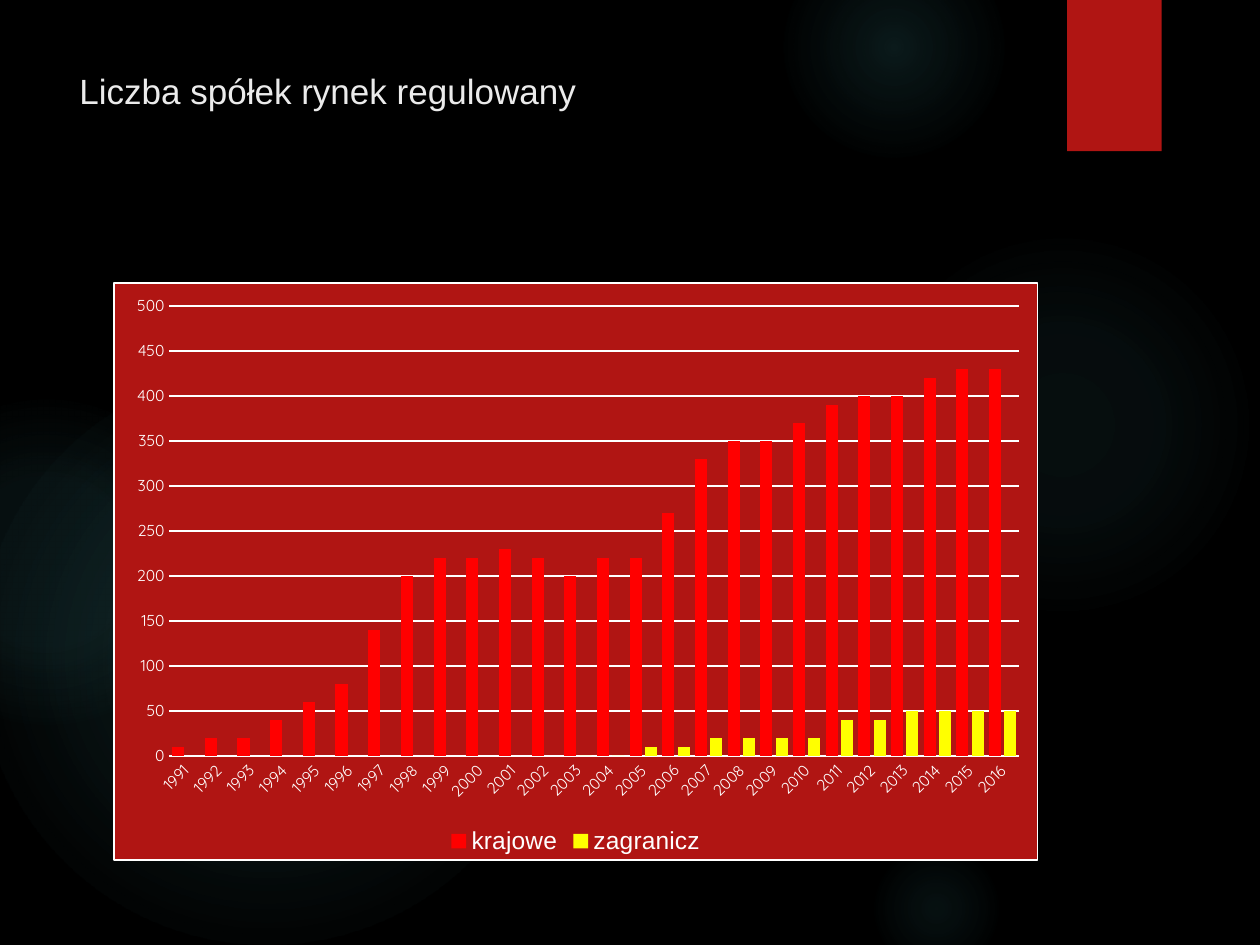
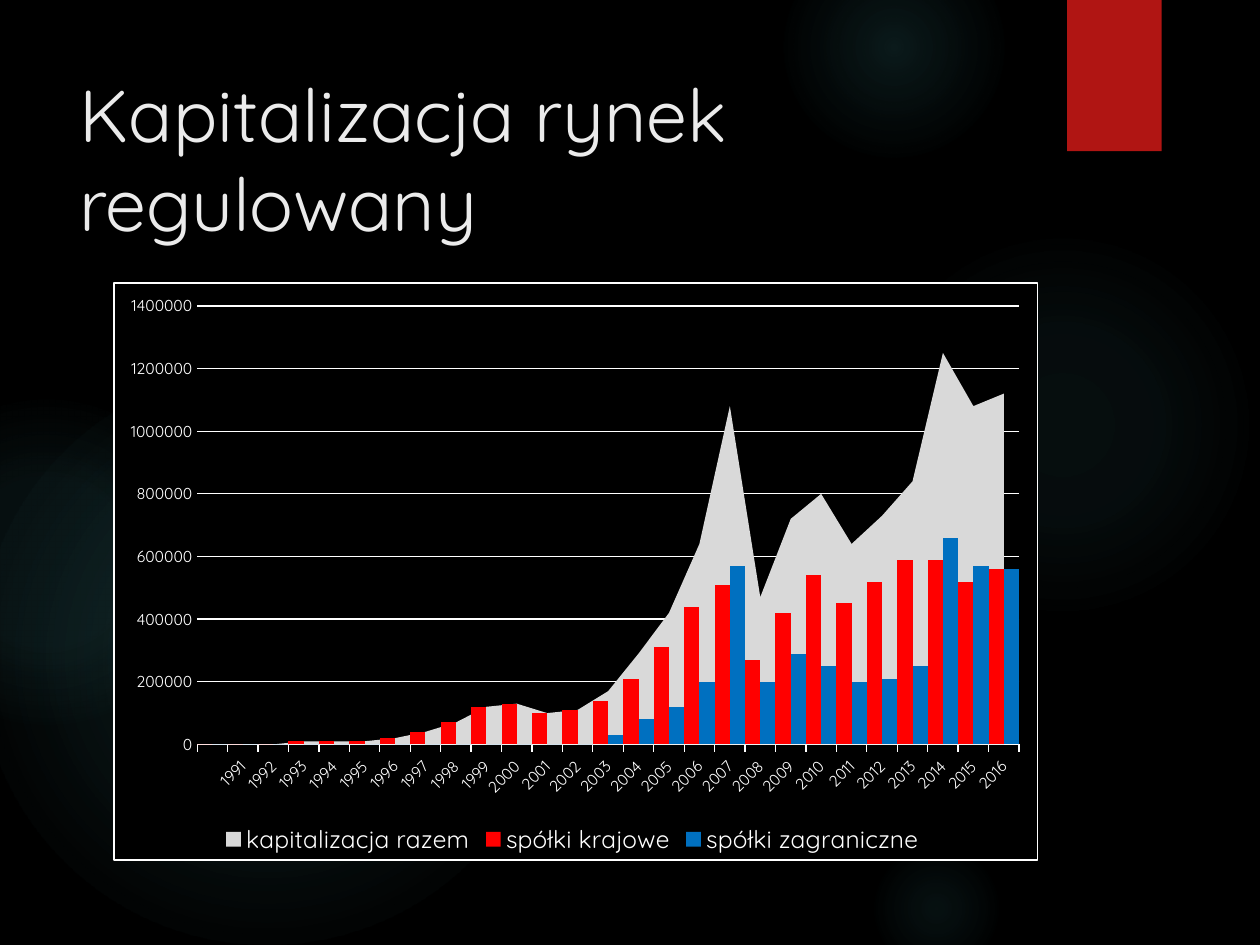
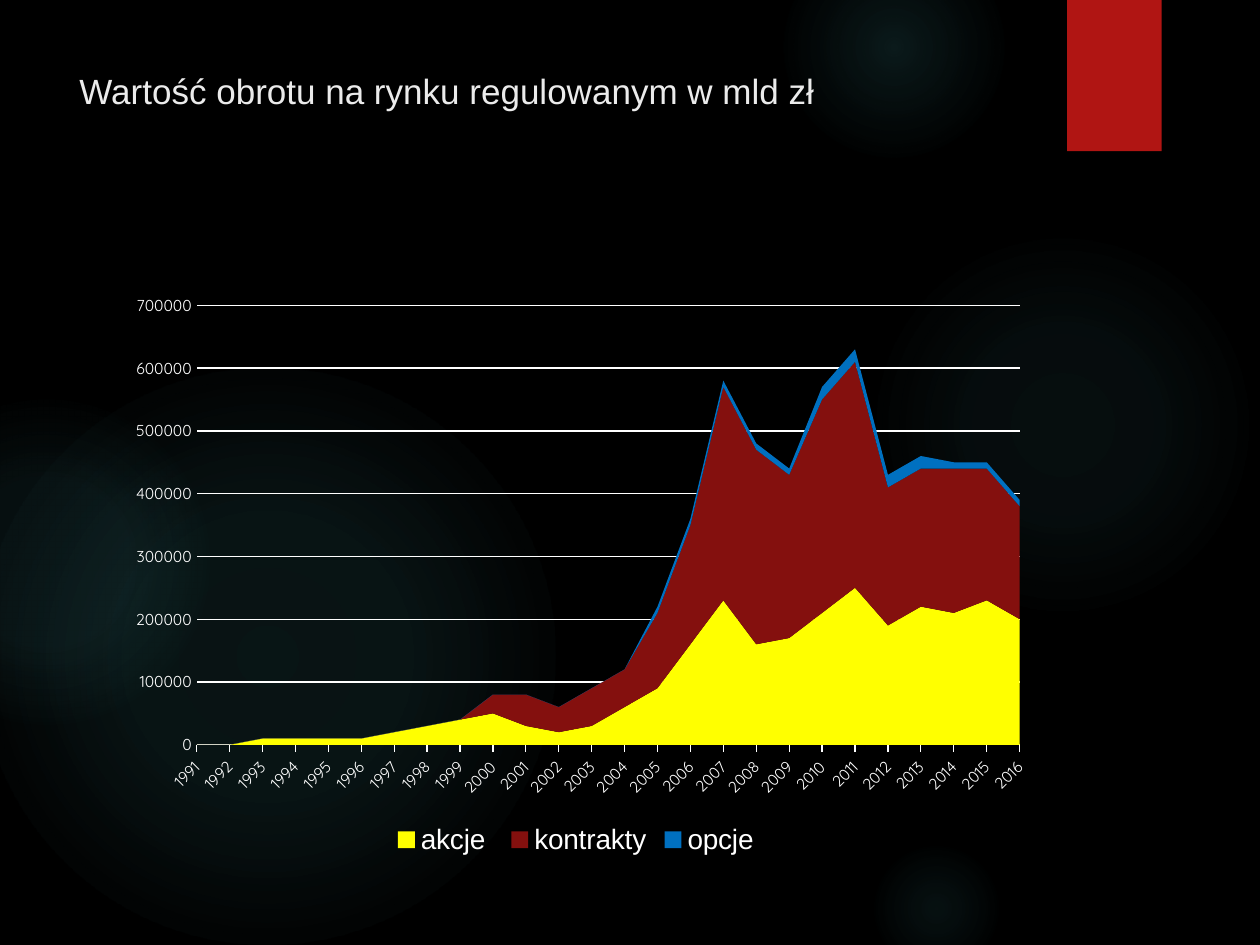
from dataclasses import dataclass

from pptx import Presentation
from pptx.chart.data import CategoryChartData
from pptx.dml.color import RGBColor
from pptx.enum.chart import XL_CHART_TYPE, XL_LEGEND_POSITION, XL_TICK_MARK
from pptx.enum.shapes import MSO_SHAPE
from pptx.enum.text import MSO_ANCHOR, MSO_AUTO_SIZE, PP_ALIGN
from pptx.oxml import parse_xml
from pptx.oxml.ns import nsdecls, qn
from pptx.util import Pt

COLUMNS = XL_CHART_TYPE.COLUMN_CLUSTERED
AREAS = XL_CHART_TYPE.AREA_STACKED
BOTTOM = XL_LEGEND_POSITION.BOTTOM
TICK_NONE = XL_TICK_MARK.NONE
TICK_OUT = XL_TICK_MARK.OUTSIDE
OVAL = MSO_SHAPE.OVAL
RECTANGLE = MSO_SHAPE.RECTANGLE
TOP = MSO_ANCHOR.TOP
LEFT = PP_ALIGN.LEFT
NO_AUTOFIT = MSO_AUTO_SIZE.NONE

EMU_PER_PX = 9144
TITLE_ONLY = 5
YEARS = [str(year) for year in range(1991, 2017)]


@dataclass(frozen=True)
class Theme:
    background: str = "000000"
    band: str = "B01513"
    glow: str = "50B9C1"
    title: str = "EBEBEB"
    white: str = "FFFFFF"
    red: str = "FF0000"
    dark_red: str = "84100E"
    yellow: str = "FFFF00"
    blue: str = "0070C0"
    grey: str = "D9D9D9"
    plain_font: str = "Arial"
    round_font: str = "Quicksand"
    small_title: int = 20
    large_title: int = 42
    chart_size: int = 10
    axis_size: int = 9
    legend_size: int = 14
    large_legend: int = 16
    line_width: float = 0.75


THEME = Theme()


@dataclass(frozen=True)
class Box:
    left: int
    top: int
    width: int
    height: int

    def emu(self) -> tuple[int, ...]:
        sides = (self.left, self.top, self.width, self.height)
        return tuple(side * EMU_PER_PX for side in sides)


@dataclass(frozen=True)
class Glow:
    left: int
    top: int
    size: int
    stops: tuple[tuple[int, int], ...]


@dataclass(frozen=True)
class Series:
    name: str
    color: str
    values: list[int]
    unit: int = 1
    lead: int = 0
    as_column: bool = False

    def numbers(self) -> list[int | None]:
        return [None] * self.lead + [value * self.unit for value in self.values]


@dataclass(frozen=True)
class ChartSlide:
    title: str
    title_font: str
    title_size: int
    kind: XL_CHART_TYPE
    categories: list[str]
    series: list[Series]
    maximum: int
    step: int
    plot: tuple[float, float, float, float]
    tick: XL_TICK_MARK
    legend_font: str
    legend_size: int
    cross: str = "between"
    fill: str | None = None


TITLE_BOX = Box(53, 50, 772, 153)
CHART_BOX = Box(90, 224, 734, 459)
BAND_BOX = Box(847, 0, 75, 120)
GLOWS = [
    Glow(689, 183, 308, ((0, 7), (36, 6), (69, 0))),
    Glow(622, -50, 175, ((0, 14), (36, 7), (73, 0))),
    Glow(689, 667, 108, ((0, 9), (36, 5), (66, 0))),
    Glow(-17, 292, 458, ((0, 11), (36, 10), (75, 0))),
    Glow(-92, 317, 258, ((0, 8), (36, 8), (72, 0))),
]

SLIDES = [
    ChartSlide(
        "Liczba spółek rynek regulowany", THEME.plain_font, THEME.small_title,
        COLUMNS, YEARS,
        [
            Series("krajowe", THEME.red,
                   [10, 20, 20, 40, 60, 80, 140, 200, 220, 220, 230, 220, 200,
                    220, 220, 270, 330, 350, 350, 370, 390, 400, 400, 420, 430, 430]),
            Series("zagranicz", THEME.yellow,
                   [0, 0, 10, 10, 20, 20, 20, 20, 40, 40, 50, 50, 50, 50], lead=12),
        ],
        500, 50, (0.06, 0.04, 0.92, 0.78), TICK_NONE,
        THEME.plain_font, THEME.legend_size, fill=THEME.band,
    ),
    ChartSlide(
        "Kapitalizacja rynek regulowany", THEME.round_font, THEME.large_title,
        AREAS, ["", *YEARS],
        [
            Series("kapitalizacja razem", THEME.grey,
                   [0, 0, 1, 1, 1, 2, 4, 7, 12, 13, 10, 11, 17, 29, 42, 64, 108,
                    47, 72, 80, 64, 73, 84, 125, 108, 112], 10000, 1),
            Series("spółki krajowe", THEME.red,
                   [0, 0, 1, 1, 1, 2, 4, 7, 12, 13, 10, 11, 14, 21, 31, 44, 51,
                    27, 42, 54, 45, 52, 59, 59, 52, 56], 10000, 1, True),
            Series("spółki zagraniczne ", THEME.blue,
                   [3, 8, 12, 20, 57, 20, 29, 25, 20, 21, 25, 66, 57, 56],
                   10000, 13, True),
        ],
        1400000, 200000, (0.09, 0.04, 0.89, 0.76), TICK_OUT,
        THEME.round_font, THEME.legend_size, fill=THEME.background,
    ),
    ChartSlide(
        "Wartość obrotu na rynku regulowanym w mld zł",
        THEME.plain_font, THEME.small_title, AREAS, YEARS,
        [
            Series("akcje ", THEME.yellow,
                   [0, 0, 1, 1, 1, 1, 2, 3, 4, 5, 3, 2, 3, 6, 9, 16, 23, 16, 17,
                    21, 25, 19, 22, 21, 23, 20], 10000),
            Series("kontrakty", THEME.dark_red,
                   [0, 0, 3, 5, 4, 6, 6, 12, 19, 34, 31, 26, 34, 36, 22, 22, 23,
                    21, 18], 10000, 7),
            Series("opcje", THEME.blue,
                   [0, 0, 1, 1, 1, 1, 1, 2, 2, 2, 2, 1, 1, 1], 10000, 12),
        ],
        700000, 100000, (0.09, 0.04, 0.89, 0.76), TICK_OUT,
        THEME.plain_font, THEME.large_legend, cross="midCat",
    ),
]


def rgb(color: str) -> RGBColor:
    return RGBColor.from_string(color)


def style_font(font, name: str, size: int, color: str) -> None:
    font.name = name
    font.size = Pt(size)
    font.bold = False
    font.color.rgb = rgb(color)


def style_line(line) -> None:
    line.color.rgb = rgb(THEME.white)
    line.width = Pt(THEME.line_width)


def add_plain_shape(slide, kind: MSO_SHAPE, box: Box):
    shape = slide.shapes.add_shape(kind, *box.emu())
    shape.shadow.inherit = False
    shape.line.fill.background()
    return shape


def add_glow(slide, glow: Glow):
    shape = add_plain_shape(slide, OVAL, Box(glow.left, glow.top, glow.size, glow.size))
    shape.fill.background()
    stops = "".join(
        f'<a:gs pos="{position * 1000}"><a:srgbClr val="{THEME.glow}">'
        f'<a:alpha val="{alpha * 1000}"/></a:srgbClr></a:gs>'
        for position, alpha in glow.stops
    )
    gradient = parse_xml(
        f'<a:gradFill {nsdecls("a")} rotWithShape="1"><a:gsLst>{stops}</a:gsLst>'
        '<a:path path="circle"><a:fillToRect l="50000" t="50000" r="50000" b="50000"/>'
        "</a:path></a:gradFill>"
    )
    properties = shape._element.spPr
    properties.replace(properties.find(qn("a:noFill")), gradient)
    return shape


def add_band(slide):
    shape = add_plain_shape(slide, RECTANGLE, BAND_BOX)
    shape.fill.solid()
    shape.fill.fore_color.rgb = rgb(THEME.band)
    shape._element.spPr.find(qn("a:effectLst")).append(parse_xml(
        f'<a:outerShdw {nsdecls("a")} blurRad="{Pt(3)}" dist="{Pt(2)}" dir="5400000">'
        '<a:srgbClr val="000000"><a:alpha val="45000"/></a:srgbClr></a:outerShdw>'
    ))
    return shape


def dress_layout(layout, slide) -> None:
    layout.background.fill.solid()
    layout.background.fill.fore_color.rgb = rgb(THEME.background)
    tree = layout.shapes._spTree
    for placeholder in list(layout.placeholders)[1:]:
        tree.remove(placeholder._element)
    decorations = [add_glow(slide, glow) for glow in GLOWS] + [add_band(slide)]
    for shape in decorations:
        tree.append(shape._element)


def set_title(slide, content: ChartSlide) -> None:
    title = slide.shapes.title
    title.left, title.top, title.width, title.height = TITLE_BOX.emu()
    frame = title.text_frame
    frame.text = content.title
    frame.word_wrap = True
    frame.auto_size = NO_AUTOFIT
    frame.vertical_anchor = TOP
    para = frame.paragraphs[0]
    para.alignment = LEFT
    style_font(para.runs[0].font, content.title_font, content.title_size, THEME.title)


def set_frame(chart, fill: str | None) -> None:
    if fill:
        paint = f'<a:solidFill><a:srgbClr val="{fill}"/></a:solidFill>'
        border = f'<a:solidFill><a:srgbClr val="{THEME.white}"/></a:solidFill>'
    else:
        paint = border = "<a:noFill/>"
    chart._chartSpace.find(qn("c:chart")).addnext(parse_xml(
        f'<c:spPr {nsdecls("c", "a")}>{paint}'
        f'<a:ln w="{Pt(THEME.line_width)}">{border}</a:ln></c:spPr>'
    ))


def set_plot_layout(plot_area, plot: tuple[float, float, float, float]) -> None:
    for layout in plot_area.findall(qn("c:layout")):
        plot_area.remove(layout)
    sizes = "".join(f'<c:{key} val="{value}"/>' for key, value in zip("xywh", plot))
    plot_area.insert(0, parse_xml(
        f'<c:layout {nsdecls("c")}><c:manualLayout><c:layoutTarget val="inner"/>'
        f'<c:xMode val="edge"/><c:yMode val="edge"/>{sizes}'
        "</c:manualLayout></c:layout>"
    ))


def set_crossing(axis_element, cross: str) -> None:
    for element in axis_element.findall(qn("c:crossBetween")):
        axis_element.remove(element)
    axis_element.find(qn("c:crosses")).addnext(
        parse_xml(f'<c:crossBetween {nsdecls("c")} val="{cross}"/>')
    )


def style_axes(chart, content: ChartSlide) -> None:
    years, values = chart.category_axis, chart.value_axis
    for axis in (years, values):
        axis.minor_tick_mark = TICK_NONE
        style_font(axis.tick_labels.font, THEME.round_font, THEME.axis_size, THEME.white)
    years.has_major_gridlines = False
    years.major_tick_mark = content.tick
    style_line(years.format.line)
    years._element.find(qn("c:txPr")).find(qn("a:bodyPr")).set("rot", "-2700000")
    values.minimum_scale = 0
    values.maximum_scale = content.maximum
    values.major_unit = content.step
    values.major_tick_mark = TICK_NONE
    values.tick_labels.number_format = "0"
    values.tick_labels.number_format_is_linked = False
    values.has_major_gridlines = True
    style_line(values.major_gridlines.format.line)
    values.format.line.fill.background()
    set_crossing(values._element, content.cross)


def move_to_columns(chart, series: list[Series]) -> None:
    areas = chart._chartSpace.find(".//" + qn("c:areaChart"))
    columns = parse_xml(
        f'<c:barChart {nsdecls("c")}><c:barDir val="col"/>'
        '<c:grouping val="clustered"/><c:varyColors val="0"/></c:barChart>'
    )
    for element, item in zip(areas.findall(qn("c:ser")), series):
        if item.as_column:
            columns.append(element)
    axis_ids = [axis.get("val") for axis in areas.findall(qn("c:axId"))]
    settings = [("gapWidth", 0), ("overlap", 0)] + [("axId", key) for key in axis_ids]
    for tag, value in settings:
        columns.append(parse_xml(f'<c:{tag} {nsdecls("c")} val="{value}"/>'))
    areas.addnext(columns)


def add_market_chart(slide, content: ChartSlide) -> None:
    chart_data = CategoryChartData()
    chart_data.categories = content.categories
    for item in content.series:
        chart_data.add_series(item.name, item.numbers())
    chart = slide.shapes.add_chart(content.kind, *CHART_BOX.emu(), chart_data).chart
    chart.has_title = False
    style_font(chart.font, THEME.round_font, THEME.chart_size, THEME.white)
    set_frame(chart, content.fill)
    style_axes(chart, content)
    chart.has_legend = True
    chart.legend.position = BOTTOM
    chart.legend.include_in_layout = False
    style_font(chart.legend.font, content.legend_font, content.legend_size, THEME.white)
    plot = chart.plots[0]
    plot.vary_by_categories = False
    for series, item in zip(plot.series, content.series):
        series.format.fill.solid()
        series.format.fill.fore_color.rgb = rgb(item.color)
    if content.kind == COLUMNS:
        plot.gap_width = 43
        plot.overlap = -27
    if any(item.as_column for item in content.series):
        move_to_columns(chart, content.series)
    set_plot_layout(chart._chartSpace.find(".//" + qn("c:plotArea")), content.plot)


def main() -> None:
    deck = Presentation()
    deck.slide_width = 1000 * EMU_PER_PX
    deck.slide_height = 750 * EMU_PER_PX
    layout = deck.slide_layouts[TITLE_ONLY]
    pages = [deck.slides.add_slide(layout) for _ in SLIDES]
    dress_layout(layout, pages[0])
    for page, content in zip(pages, SLIDES):
        set_title(page, content)
        add_market_chart(page, content)
    deck.save("out.pptx")


if __name__ == "__main__":
    main()
